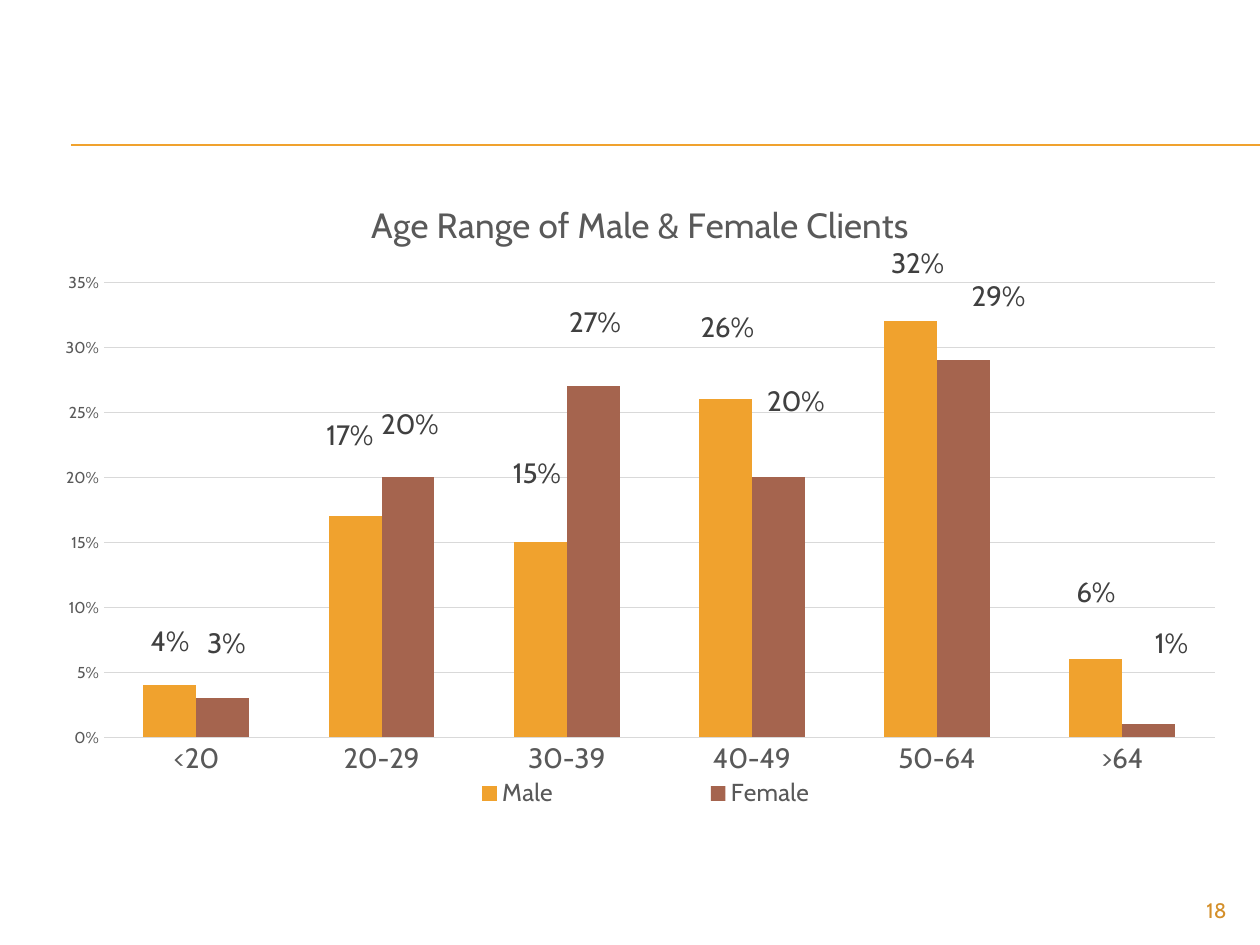
import pptx
import pptx.chart.data
import pptx.dml.color
import pptx.enum.chart
import pptx.enum.shapes
import pptx.enum.text
import pptx.oxml
import pptx.oxml.ns
import pptx.util

Pt = pptx.util.Pt
RGBColor = pptx.dml.color.RGBColor
GOLD = RGBColor(0xF0, 0xA2, 0x2E)
DARK_GOLD = RGBColor(0xD4, 0x8F, 0x29)
BROWN = RGBColor(0xA5, 0x64, 0x4E)
GRAY = RGBColor(0x59, 0x59, 0x59)
DARK_GRAY = RGBColor(0x40, 0x40, 0x40)
GRID = RGBColor(0xD9, 0xD9, 0xD9)
FONT = "Cabin"
CHART_W, CHART_H = 684, 379
NO_LEADER_LINES = (
    f'<c:extLst {pptx.oxml.ns.nsdecls("c")}><c:ext uri="{{CE6537A1-D6FC-4f65-9D91-7224C49458BB}}" '
    'xmlns:c15="http://schemas.microsoft.com/office/drawing/2012/chart">'
    '<c15:showLeaderLines val="0"/></c:ext></c:extLst>')


def set_font(font, size, color):
    font.name = FONT
    font.size = Pt(size)
    font.bold = False
    font.color.rgb = color


def place(parent, index, x, y, w=None, h=None, inner=False, offset=False):
    for old in parent.findall(pptx.oxml.ns.qn("c:layout")):
        parent.remove(old)
    tags = '<c:layoutTarget val="inner"/>' if inner else ""
    if not offset:
        tags += '<c:xMode val="edge"/><c:yMode val="edge"/>'
    for tag, value, full in (("x", x, CHART_W), ("y", y, CHART_H), ("w", w, CHART_W), ("h", h, CHART_H)):
        if value is not None:
            tags += f'<c:{tag} val="{value / full:.4f}"/>'
    parent.insert(index, pptx.oxml.parse_xml(
        f'<c:layout {pptx.oxml.ns.nsdecls("c")}><c:manualLayout>{tags}</c:manualLayout></c:layout>'))


prs = pptx.Presentation()
prs.slide_width, prs.slide_height = Pt(720), Pt(540)
s = prs.slides.add_slide(prs.slide_layouts[6])

for y in (82.8, 83.2):
    line = s.shapes.add_connector(pptx.enum.shapes.MSO_CONNECTOR.STRAIGHT, Pt(40.5), Pt(y), Pt(720), Pt(y))
    line.line.color.rgb = GOLD
    line.line.width = Pt(0.75)
    line._element.spPr.append(pptx.oxml.parse_xml(f'<a:effectLst {pptx.oxml.ns.nsdecls("a")}/>'))

data = pptx.chart.data.CategoryChartData(number_format="0%")
data.categories = ["<20", "20-29", "30-39", "40-49", "50-64", ">64"]
data.add_series("Male", (0.04, 0.17, 0.15, 0.26, 0.32, 0.06))
data.add_series("Female", (0.03, 0.2, 0.27, 0.2, 0.29, 0.01))
chart = s.shapes.add_chart(pptx.enum.chart.XL_CHART_TYPE.COLUMN_CLUSTERED,
                           Pt(24), Pt(100), Pt(CHART_W), Pt(CHART_H), data).chart
chart.font.name = FONT
chart.font.size = Pt(10)

chart.has_title = True
p = chart.chart_title.text_frame.paragraphs[0]
p.text = "Age Range of Male & Female Clients"
set_font(p.font, 20, GRAY)
place(chart.chart_title._element, 1, 184.5, 11)

chart.has_legend = True
legend = chart.legend
legend.position = pptx.enum.chart.XL_LEGEND_POSITION.BOTTOM
legend.include_in_layout = False
set_font(legend.font, 14, GRAY)
place(legend._element, 1, 166, 343, 358, 21)

for axis, size in ((chart.category_axis, 16), (chart.value_axis, 9)):
    axis.major_tick_mark = axis.minor_tick_mark = pptx.enum.chart.XL_TICK_MARK.NONE
    axis.format.line.fill.background()
    set_font(axis.tick_labels.font, size, GRAY)
axis.minimum_scale, axis.maximum_scale, axis.major_unit = 0, 0.35, 0.05
axis.tick_labels.number_format = "0%"
axis.tick_labels.number_format_is_linked = False
axis.major_gridlines.format.line.color.rgb = GRID
axis.major_gridlines.format.line.width = Pt(0.75)

plot = chart.plots[0]
plot.gap_width, plot.overlap = 150, 0
plot.vary_by_categories = False
place(chart._chartSpace.chart.plotArea, 0, 35.3, 61.4, 634.9, 260, inner=True)

label_offsets = (
    ((0, -13), (-3, -34), (-2, -27), (1, -29), (4, -21), (0, -26)),
    ((2, -19), (1, -18), (1, -24), (10, -31), (20, -24), (13, -34)),
)
for series, color, offsets in zip(plot.series, (GOLD, BROWN), label_offsets):
    series.format.fill.solid()
    series.format.fill.fore_color.rgb = color
    labels = series.data_labels
    labels.show_value = True
    labels.number_format = "0%"
    labels.number_format_is_linked = False
    set_font(labels.font, 16, DARK_GRAY)
    for i, (dx, dy) in enumerate(offsets):
        label = series.points[i].data_label
        set_font(label.font, 16, DARK_GRAY)
        label.position = pptx.enum.chart.XL_LABEL_POSITION.OUTSIDE_END
        place(labels._element.dLbl_lst[i], 1, dx, dy, offset=True)
    for leader in labels._element.findall(pptx.oxml.ns.qn("c:showLeaderLines")):
        leader.set("val", "0")
    labels._element.append(pptx.oxml.parse_xml(NO_LEADER_LINES))

tf = s.shapes.add_textbox(Pt(648), Pt(510), Pt(60), Pt(20)).text_frame
tf.word_wrap = True
tf.vertical_anchor = pptx.enum.text.MSO_ANCHOR.MIDDLE
p = tf.paragraphs[0]
p.text = "18"
p.alignment = pptx.enum.text.PP_ALIGN.RIGHT
set_font(p.font, 12, DARK_GOLD)

prs.save("out.pptx")
